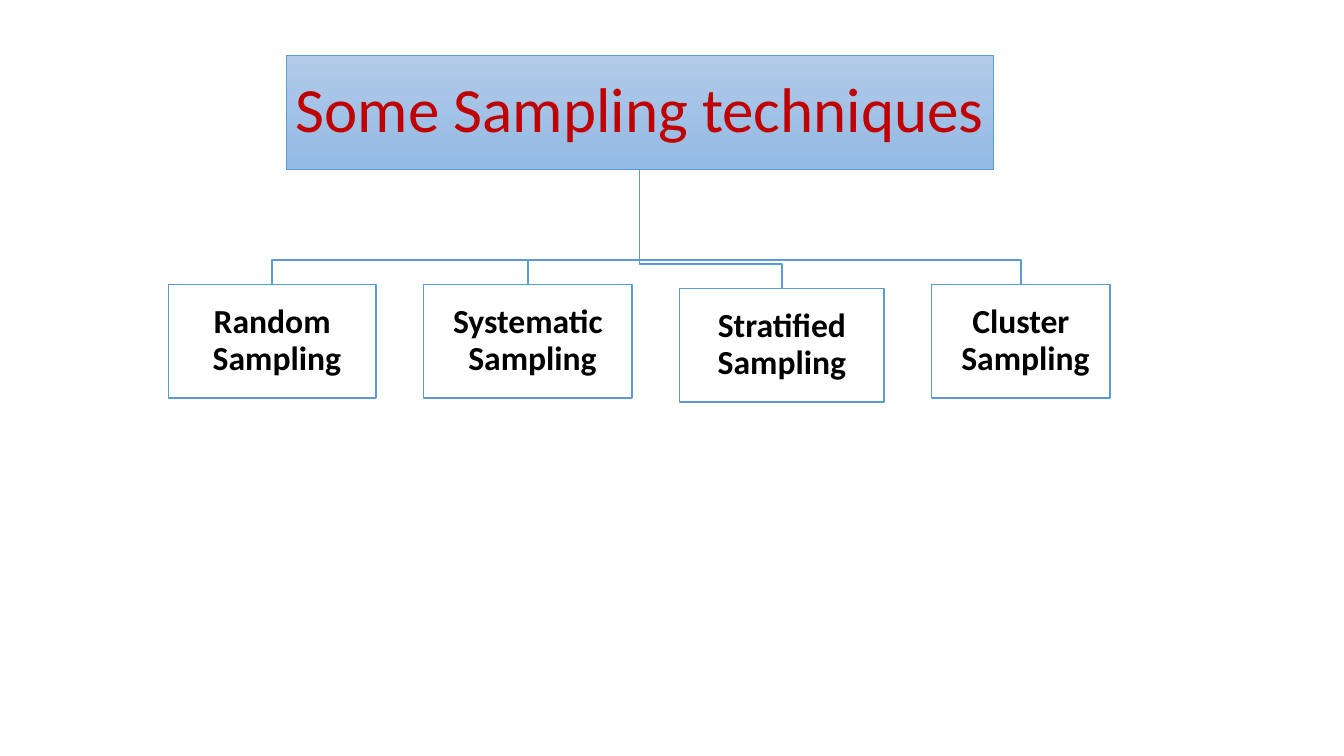
from dataclasses import dataclass

from pptx import Presentation
from pptx.dml.color import RGBColor
from pptx.enum.shapes import MSO_SHAPE
from pptx.enum.text import MSO_ANCHOR, PP_ALIGN
from pptx.util import Inches, Pt

RECTANGLE = MSO_SHAPE.RECTANGLE
MIDDLE = MSO_ANCHOR.MIDDLE
CENTER = PP_ALIGN.CENTER


@dataclass(frozen=True)
class Theme:
    font: str = "Calibri"
    title_size: int = 45
    label_size: int = 24
    title_color: str = "C00000"
    label_color: str = "000000"
    line: str = "5B9BD5"
    box_fill: str = "FFFFFF"
    gradient: tuple = ("B1CBE9", "93B9E4")


class ChartSlide:
    """Draws the parts of a hierarchy chart in one theme."""

    def __init__(self, slide, theme):
        self.slide = slide
        self.theme = theme

    def set_line(self, shape, width):
        shape.shadow.inherit = False
        shape.line.color.rgb = RGBColor.from_string(self.theme.line)
        shape.line.width = Pt(width)

    def box(self, left, top, width, height, line_width):
        shape = self.slide.shapes.add_shape(
            RECTANGLE, Inches(left), Inches(top), Inches(width), Inches(height))
        self.set_line(shape, line_width)
        return shape

    def add_text(self, shape, text, size, color, inset, bold=False):
        frame = shape.text_frame
        frame.word_wrap = True
        frame.vertical_anchor = MIDDLE
        frame.margin_left = frame.margin_right = Inches(inset)
        frame.margin_top = frame.margin_bottom = Inches(inset)
        paragraph = frame.paragraphs[0]
        paragraph.alignment = CENTER
        paragraph.line_spacing = 0.9
        # Right-to-left paragraph: a closing space shows at the left of the last line
        paragraph._p.get_or_add_pPr().set("rtl", "1")
        run = paragraph.add_run()
        run.text = text
        run.font.name = self.theme.font
        run.font.size = Pt(size)
        run.font.bold = bold
        run.font.color.rgb = RGBColor.from_string(color)

    def title_box(self, text, left, top, width, height):
        shape = self.box(left, top, width, height, 0.5)
        shape.fill.gradient()
        shape.fill.gradient_angle = 270
        for stop, color in zip(shape.fill.gradient_stops, self.theme.gradient):
            stop.color.rgb = RGBColor.from_string(color)
        self.add_text(shape, text, self.theme.title_size, self.theme.title_color, 0.03)

    def label_box(self, text, left, top, width, height):
        shape = self.box(left, top, width, height, 1)
        shape.fill.solid()
        shape.fill.fore_color.rgb = RGBColor.from_string(self.theme.box_fill)
        self.add_text(shape, text, self.theme.label_size, self.theme.label_color,
                      0.02, bold=True)

    def branch(self, start, end, drop):
        """Bent line that turns at the height `drop` above its end."""
        (start_x, start_y), (end_x, end_y) = start, end
        bend_y = end_y - drop
        corners = [(start_x, bend_y), (end_x, bend_y), (end_x, end_y)]
        builder = self.slide.shapes.build_freeform(Inches(start_x), Inches(start_y))
        builder.add_line_segments(
            [(Inches(x), Inches(y)) for x, y in corners], close=False)
        shape = builder.convert_to_shape()
        shape.fill.background()
        self.set_line(shape, 1)


def main():
    presentation = Presentation()
    presentation.slide_width = Inches(13.33)
    presentation.slide_height = Inches(7.5)
    slide = presentation.slides.add_slide(presentation.slide_layouts[6])
    chart = ChartSlide(slide, Theme())

    box_height = 1.13
    title_left, title_top, title_width = 2.84, 0.55, 7.01
    title_bottom = (title_left + title_width / 2, title_top + box_height)

    # Techniques: text, top and width; equal gaps between the boxes
    techniques = [
        ("Random Sampling ", 2.82, 2.06),
        ("Systematic Sampling ", 2.82, 2.07),
        ("Stratified Sampling", 2.86, 2.03),
        ("Cluster Sampling ", 2.82, 1.77),
    ]
    left, gap = 1.67, 0.47
    placed = []
    for text, top, width in techniques:
        placed.append((text, left, top, width))
        left += width + gap

    # Branches lie behind the boxes
    for text, left, top, width in reversed(placed):
        chart.branch(title_bottom, (left + width / 2, top), 0.24)

    # Title and technique boxes
    chart.title_box("Some Sampling techniques",
                    title_left, title_top, title_width, box_height)
    for text, left, top, width in placed:
        chart.label_box(text, left, top, width, box_height)

    presentation.save("out.pptx")


if __name__ == "__main__":
    main()
